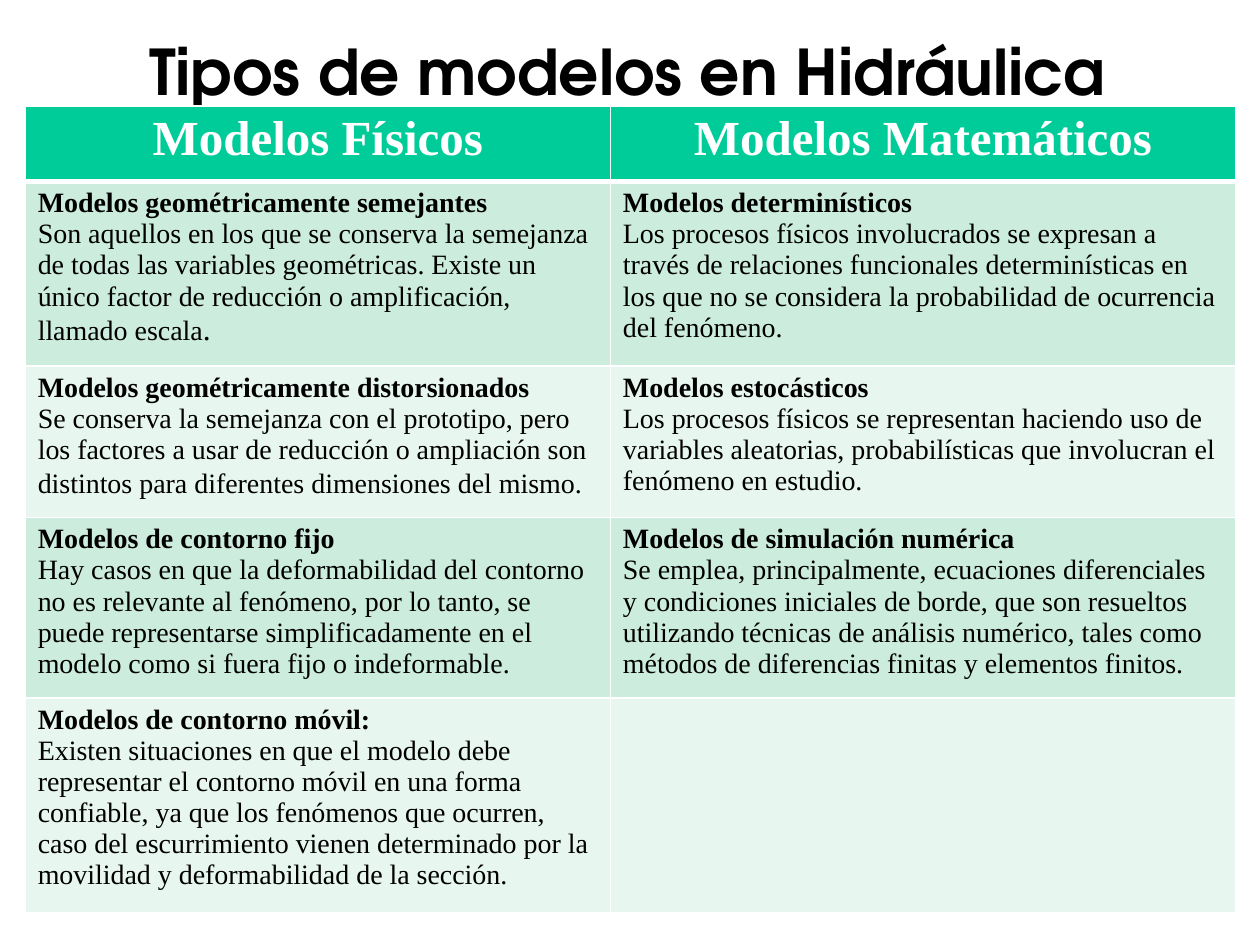
"""Build a slide comparing physical and mathematical models in hydraulics."""
from lxml import etree
from pptx import Presentation
from pptx import util as u
from pptx.dml.color import RGBColor
from pptx.enum import text
from pptx.oxml import ns

Pt = u.Pt
SERIF = "Times New Roman"


def style(font, name, size, color, bold):
    font.name, font.size, font.bold = name, Pt(size), bold
    font.color.rgb = RGBColor.from_string(color)


def edge(cell, side, width, color):
    props = cell._tc.get_or_add_tcPr()
    line = etree.SubElement(props, ns.qn("a:ln" + side), w=str(Pt(width)))
    fill = etree.SubElement(line, ns.qn("a:solidFill"))
    etree.SubElement(fill, ns.qn("a:srgbClr"), val=color)


heads = ["Modelos Físicos", "Modelos Matemáticos"]
# Each entry: heading, body, larger closing characters
body = [
    [("Modelos geométricamente semejantes",
      "Son aquellos en los que se conserva la semejanza de todas las variables "
      "geométricas. Existe un único factor de reducción o amplificación, "
      "llamado escala", "."),
     ("Modelos determinísticos",
      "Los procesos físicos involucrados se expresan a través de relaciones "
      "funcionales determinísticas en los que no se considera la probabilidad "
      "de ocurrencia del fenómeno.", "")],
    [("Modelos geométricamente distorsionados",
      "Se conserva la semejanza con el prototipo, pero los factores a usar de "
      "reducción o ampliación son distintos para diferentes dimensiones del "
      "mismo.", " "),
     ("Modelos estocásticos",
      "Los procesos físicos se representan haciendo uso de\nvariables "
      "aleatorias, probabilísticas que involucran el fenómeno en estudio.", "")],
    [("Modelos de contorno fijo",
      "Hay casos en que la deformabilidad del contorno no es relevante al "
      "fenómeno, por lo tanto, se puede representarse simplificadamente en el "
      "modelo como si fuera fijo o indeformable.", ""),
     ("Modelos de simulación numérica",
      "Se emplea, principalmente, ecuaciones diferenciales y condiciones "
      "iniciales de borde, que son resueltos utilizando técnicas de análisis "
      "numérico, tales como métodos de diferencias finitas y elementos "
      "finitos.", "")],
    [("Modelos de contorno móvil:",
      "Existen situaciones en que el modelo debe\nrepresentar el contorno móvil "
      "en una forma confiable, ya que los fenómenos que ocurren, caso del "
      "escurrimiento vienen determinado por la movilidad y deformabilidad de "
      "la sección.", ""),
     None],
]

prs = Presentation()
prs.slide_width, prs.slide_height = Pt(720), Pt(540)
slide = prs.slides.add_slide(prs.slide_layouts[6])

box = slide.shapes.add_textbox(Pt(42.5), Pt(15.1), Pt(642.2), Pt(51.1))
box.text_frame.word_wrap = True
title = box.text_frame.paragraphs[0]
title.text = "Tipos de modelos en Hidráulica "
title.alignment = text.PP_ALIGN.CENTER
style(title.font, "TeX Gyre Adventor", 36, "000000", True)

widths = [334.4, 357.2]
heights = [43.2, 105.5, 86.5, 103.1, 122.2]
table = slide.shapes.add_table(5, 2, Pt(14.4), Pt(60.5), Pt(sum(widths)),
                               Pt(sum(heights))).table
for col, width in zip(table.columns, widths):
    col.width = Pt(width)
for row, height in zip(table.rows, heights):
    row.height = Pt(height)

for r in range(5):
    for c in range(2):
        cell = table.cell(r, c)
        for side in "LRTB":
            thick = (r, side) in [(0, "B"), (1, "T")]
            edge(cell, side, 3 if thick else 1, "FFFFFF")
        cell.fill.solid()
        shade = "00CC99" if r == 0 else "CCECDE" if r % 2 else "E7F6EF"
        cell.fill.fore_color.rgb = RGBColor.from_string(shade)
        par = cell.text_frame.paragraphs[0]
        if r == 0:
            par.text = heads[c]
            par.alignment = text.PP_ALIGN.CENTER
            style(par.font, SERIF, 28, "FFFFFF", True)
        elif body[r - 1][c]:
            head, prose, tail = body[r - 1][c]
            par.text = head
            style(par.font, SERIF, 16, "000000", True)
            par = cell.text_frame.add_paragraph()
            par.text = prose
            style(par.font, SERIF, 16, "000000", False)
            if tail:
                run = par.add_run()
                run.text = tail
                style(run.font, SERIF, 18, "000000", False)

prs.save("out.pptx")
